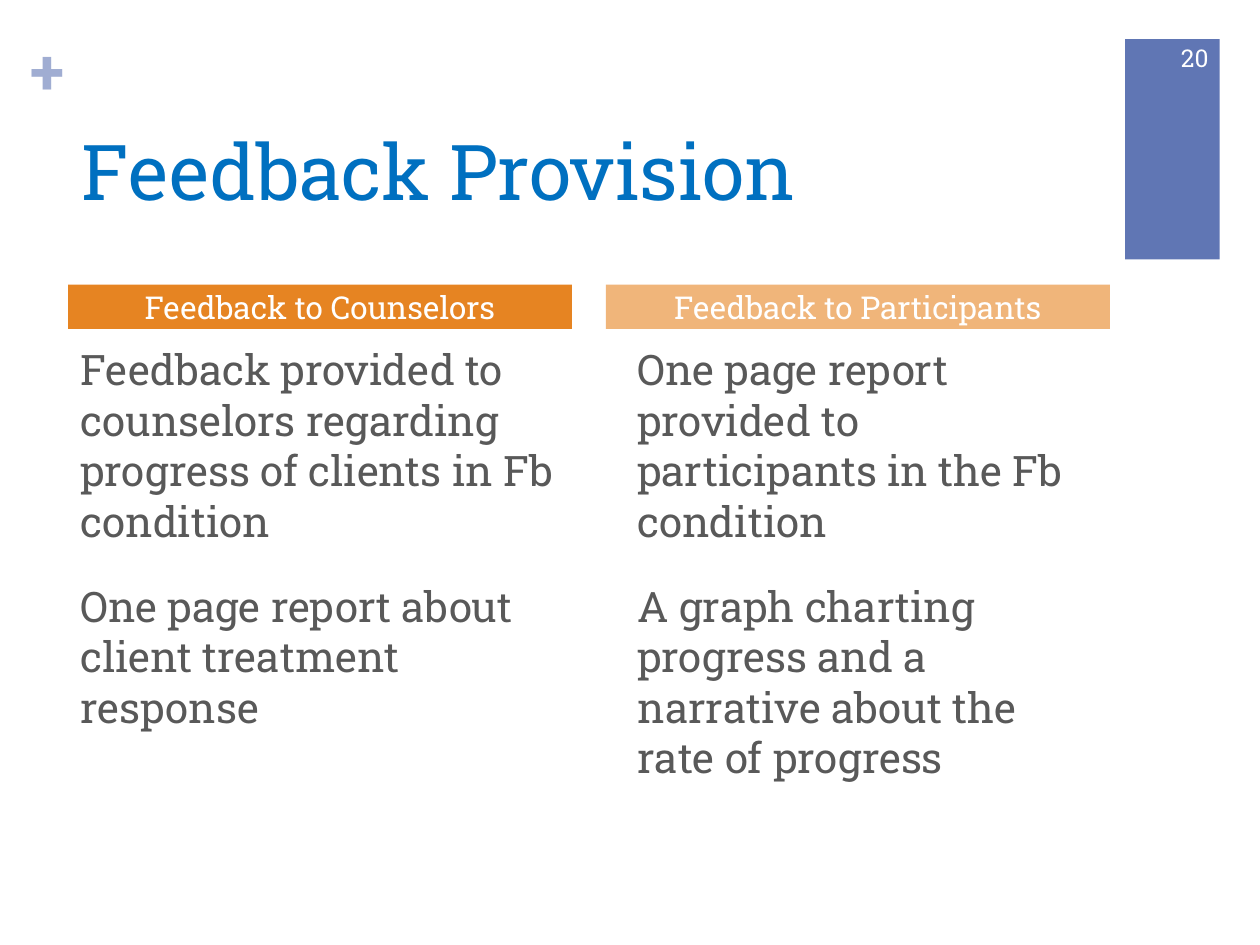
from dataclasses import dataclass

from pptx import Presentation
from pptx import util as u
from pptx.dml.color import RGBColor
from pptx.enum import shapes, text

Inches = u.Inches


@dataclass(frozen=True)
class Theme:
    font: str = "Roboto Slab"
    blue: str = "6076B4"
    pale_blue: str = "A0ADD2"
    title_blue: str = "0070C0"
    orange: str = "E68422"
    pale_orange: str = "F0B57A"
    gray: str = "595959"
    white: str = "FFFFFF"
    title_size: int = 44
    plus_size: int = 36
    body_size: int = 24
    header_size: int = 18
    number_size: int = 14


THEME = Theme()


def write(shape, lines, size, color, align=text.PP_ALIGN.LEFT,
          anchor=text.MSO_ANCHOR.TOP, bold=False):
    """Fill a shape with one paragraph per line and return the paragraphs."""
    frame = shape.text_frame
    frame.word_wrap = True
    frame.vertical_anchor = anchor
    frame.text = "\n".join(lines)
    for paragraph in frame.paragraphs:
        paragraph.alignment = align
        paragraph.font.name = THEME.font
        paragraph.font.size = u.Pt(size)
        paragraph.font.bold = bold
        paragraph.font.color.rgb = RGBColor.from_string(color)
    return frame.paragraphs


def set_margins(shape, side):
    frame = shape.text_frame
    frame.margin_left = frame.margin_right = Inches(side)
    frame.margin_top = frame.margin_bottom = 0


def add_box(slide, left, top, width, height):
    return slide.shapes.add_textbox(
        Inches(left), Inches(top), Inches(width), Inches(height))


def add_bar(slide, left, top, width, height, color):
    bar = slide.shapes.add_shape(
        shapes.MSO_SHAPE.RECTANGLE,
        Inches(left), Inches(top), Inches(width), Inches(height))
    bar.shadow.inherit = False
    bar.fill.solid()
    bar.fill.fore_color.rgb = RGBColor.from_string(color)
    bar.line.fill.background()
    return bar


def add_page_tab(slide, left, top, width, height, number):
    add_bar(slide, left, top, width, height, THEME.blue)
    label = add_box(slide, left + 0.15, top - 0.05, width - 0.14, 0.4)
    write(label, [number], THEME.number_size, THEME.white,
          text.PP_ALIGN.RIGHT, text.MSO_ANCHOR.MIDDLE)


def add_title(slide, left, top, width, height, title):
    # Plus sign above and to the left of the title
    plus = add_box(slide, left - 0.31, top - 0.63, 0.29, 0.61)
    set_margins(plus, 0)
    write(plus, ["+"], THEME.plus_size, THEME.pale_blue, bold=True)
    plus.text_frame.word_wrap = False

    box = add_box(slide, left, top, width, height)
    write(box, [title], THEME.title_size, THEME.title_blue,
          anchor=text.MSO_ANCHOR.BOTTOM)


def add_column(slide, left, top, width, height, header, color, points,
               indent=0):
    # Header bar
    bar = add_bar(slide, left, top, width, 0.35, color)
    set_margins(bar, 0.1)
    write(bar, [header], THEME.header_size, THEME.white,
          text.PP_ALIGN.CENTER, text.MSO_ANCHOR.MIDDLE)

    # Points below it
    body = add_box(slide, left + indent, top + 0.42, width - indent,
                   height - 0.42)
    for paragraph in write(body, points, THEME.body_size, THEME.gray):
        paragraph.space_before = u.Pt(20)


def main():
    presentation = Presentation()
    presentation.slide_width = Inches(10)
    presentation.slide_height = Inches(7.5)
    slide = presentation.slides.add_slide(presentation.slide_layouts[6])

    add_page_tab(slide, 8.93, 0.31, 0.75, 1.75, "20")
    add_title(slide, 0.55, 0.88, 8.26, 0.88, "Feedback Provision")
    add_column(slide, 0.54, 2.26, 4, 4.44, "Feedback to Counselors",
               THEME.orange, [
                   "Feedback provided to counselors regarding progress of "
                   "clients in Fb condition",
                   "One page report about client treatment response",
               ])
    add_column(slide, 4.81, 2.26, 4, 4.44, "Feedback to Participants",
               THEME.pale_orange, [
                   "One page report provided to participants in the Fb "
                   "condition",
                   "A graph charting progress and a narrative about the "
                   "rate of progress",
               ], indent=0.15)

    presentation.save("out.pptx")


if __name__ == "__main__":
    main()
